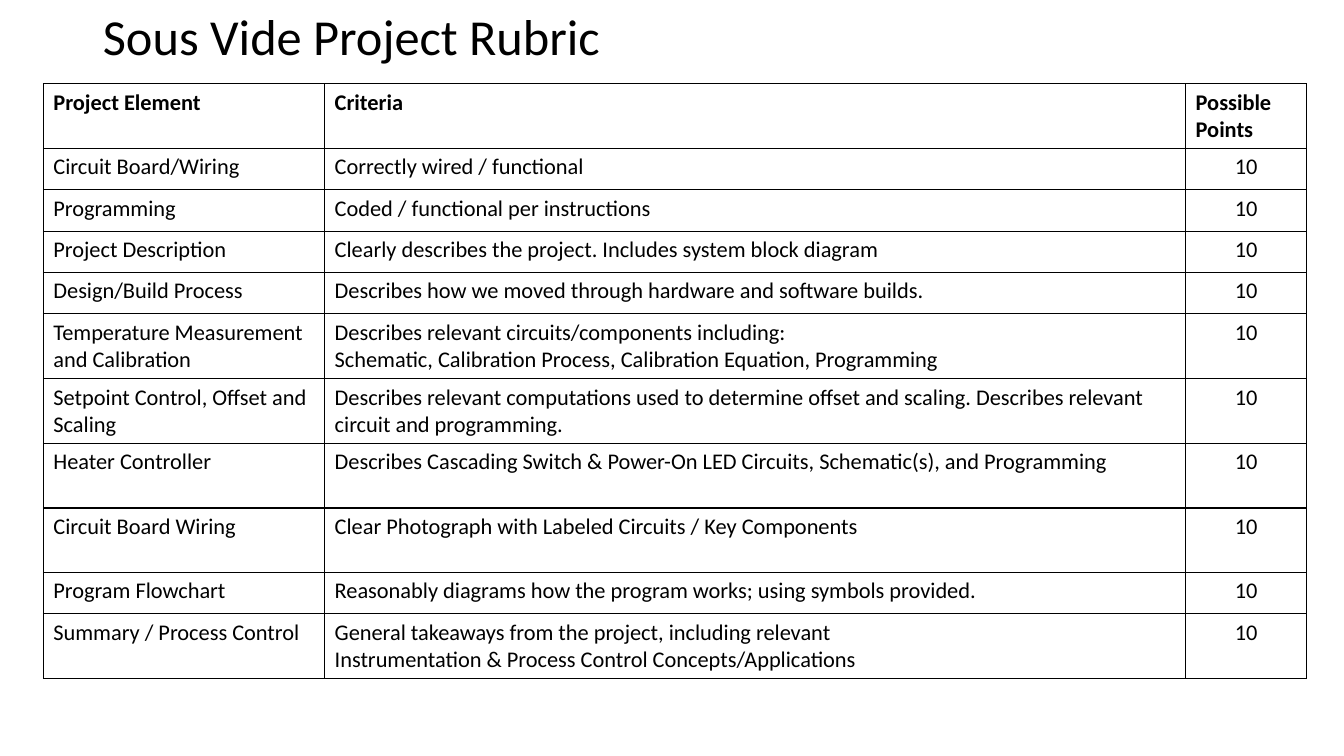
import pptx
import pptx.dml.color
import pptx.enum.text
import pptx.oxml
import pptx.oxml.ns
import pptx.util
from pptx.util import Inches

BLACK = pptx.dml.color.RGBColor(0x00, 0x00, 0x00)
FONT = "Calibri"
COLUMN_WIDTHS = (2.79, 8.54, 1.2)
ONE_LINE, TWO_LINES = 0.41, 0.64
HEADINGS = ("Project Element", "Criteria", "Possible Points")
POINTS = "10"
RUBRIC = (
    ("Circuit Board/Wiring", "Correctly wired / functional", ONE_LINE),
    ("Programming", "Coded / functional per instructions", ONE_LINE),
    ("Project Description",
     "Clearly describes the project. Includes system block diagram", ONE_LINE),
    ("Design/Build Process",
     "Describes how we moved through hardware and software builds.", ONE_LINE),
    ("Temperature Measurement and Calibration",
     "Describes relevant circuits/components including:\n"
     "Schematic, Calibration Process, Calibration Equation, Programming", TWO_LINES),
    ("Setpoint Control, Offset and Scaling",
     "Describes relevant computations used to determine offset and scaling. "
     "Describes relevant circuit and programming.", TWO_LINES),
    ("Heater Controller",
     "Describes Cascading Switch & Power-On LED Circuits, Schematic(s), and Programming",
     TWO_LINES),
    ("Circuit Board Wiring",
     "Clear Photograph with Labeled Circuits / Key Components", TWO_LINES),
    ("Program Flowchart",
     "Reasonably diagrams how the program works; using symbols provided.", ONE_LINE),
    ("Summary / Process Control",
     "General takeaways from the project, including relevant\n"
     "Instrumentation & Process Control Concepts/Applications", TWO_LINES),
)


def format_text(frame, size, alignment, bold=False):
    """Apply one font and alignment to every paragraph of a text frame."""
    for paragraph in frame.paragraphs:
        paragraph.alignment = alignment
        for run in paragraph.runs:
            run.font.name = FONT
            run.font.size = pptx.util.Pt(size)
            run.font.bold = bold
            run.font.color.rgb = BLACK


def add_borders(cell):
    """Draw a one-point black line on each side of a cell."""
    properties = cell._tc.get_or_add_tcPr()
    for position, side in enumerate(("lnL", "lnR", "lnT", "lnB")):
        border = pptx.oxml.parse_xml(
            f'<a:{side} {pptx.oxml.ns.nsdecls("a")} w="12700">'
            f'<a:solidFill><a:srgbClr val="{BLACK}"/></a:solidFill></a:{side}>')
        properties.insert(position, border)


def place_title(slide, left, top, width, height):
    """Place the slide title in the given box."""
    title = slide.shapes.title
    title.left, title.top = Inches(left), Inches(top)
    title.width, title.height = Inches(width), Inches(height)
    frame = title.text_frame
    frame.text = "Sous Vide Project Rubric"
    frame.auto_size = pptx.enum.text.MSO_AUTO_SIZE.NONE
    frame.vertical_anchor = pptx.enum.text.MSO_ANCHOR.MIDDLE
    frame.paragraphs[0].line_spacing = 0.9
    format_text(frame, 36, pptx.enum.text.PP_ALIGN.LEFT)


def place_rubric(slide, left, top, width, height):
    """Place the rubric table in the given box."""
    rows = [HEADINGS] + [(element, criteria, POINTS) for element, criteria, _ in RUBRIC]
    heights = [TWO_LINES] + [row_height for _, _, row_height in RUBRIC]
    rubric = slide.shapes.add_table(
        len(rows), len(HEADINGS),
        Inches(left), Inches(top), Inches(width), Inches(height)).table
    rubric.first_row = rubric.horz_banding = False
    for column, column_width in zip(rubric.columns, COLUMN_WIDTHS):
        column.width = Inches(column_width)
    for row_index, (texts, row_height) in enumerate(zip(rows, heights)):
        rubric.rows[row_index].height = Inches(row_height)
        for column_index, text in enumerate(texts):
            cell = rubric.cell(row_index, column_index)
            cell.text_frame.text = text
            cell.fill.background()
            add_borders(cell)
            alignment = (pptx.enum.text.PP_ALIGN.CENTER if text == POINTS
                         else pptx.enum.text.PP_ALIGN.LEFT)
            format_text(cell.text_frame, 16, alignment, bold=row_index == 0)


def main():
    """Build and save the rubric slide."""
    presentation = pptx.Presentation()
    presentation.slide_width = Inches(13.33)
    presentation.slide_height = Inches(7.5)
    slide = presentation.slides.add_slide(presentation.slide_layouts[5])
    place_title(slide, 0.92, 0.22, 11.5, 0.34)
    place_rubric(slide, 0.43, 0.83, sum(COLUMN_WIDTHS), 5.83)
    presentation.save("out.pptx")


if __name__ == "__main__":
    main()
